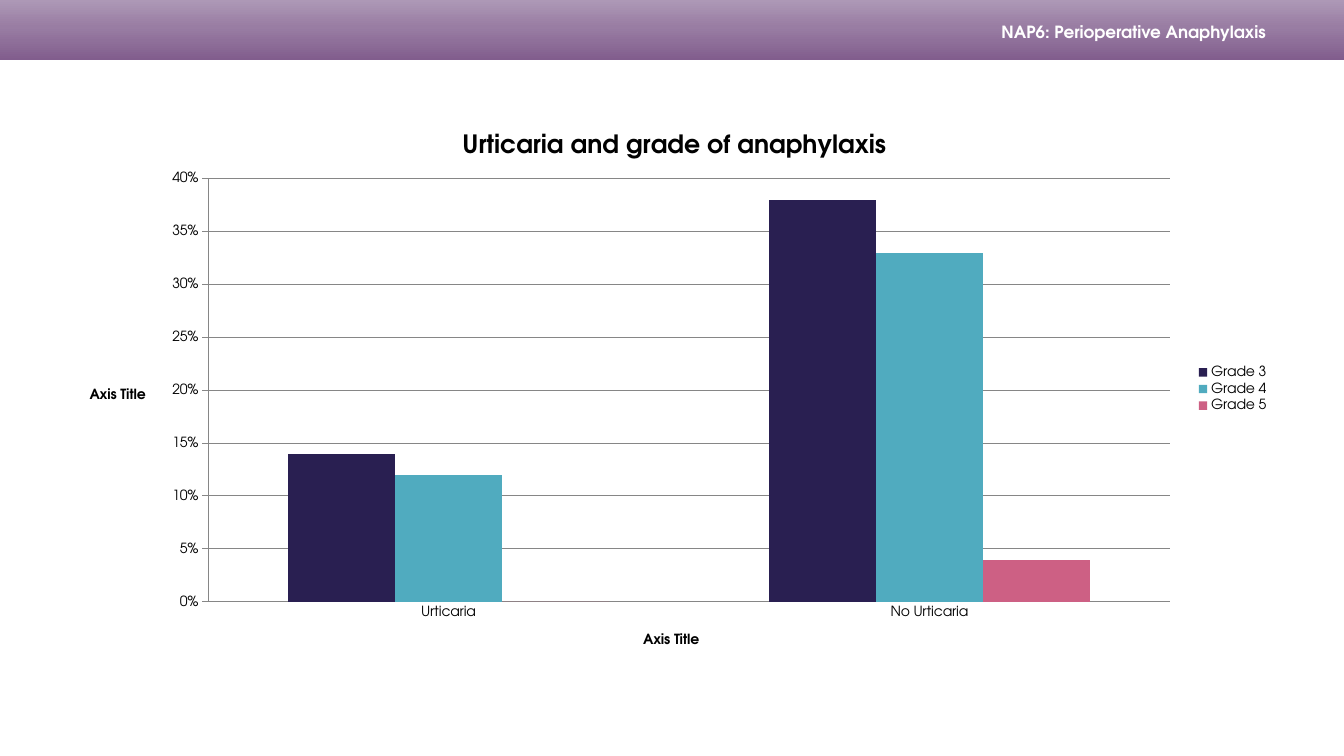
from copy import deepcopy

from lxml import etree
from pptx import Presentation
from pptx.chart.data import CategoryChartData
from pptx.dml.color import RGBColor
from pptx.enum.chart import XL_CHART_TYPE, XL_LEGEND_POSITION, XL_TICK_MARK
from pptx.enum.shapes import MSO_SHAPE
from pptx.enum.text import MSO_ANCHOR, PP_ALIGN
from pptx.oxml.ns import qn
from pptx.util import Pt

SLIDE_SIZE = (960, 540)
CHART_BOX = (49.7, 79.2, 864, 397.4)
PLOT_BOX = (148.6, 127.5, 687.1, 302.5)
COLORS = {
    "band_dark": "815D8D",
    "band_mid": "997DA3",
    "band_light": "AD98B6",
    "white": "FFFFFF",
    "black": "000000",
    "axis": "868686",
    "Grade 3": "291F51",
    "Grade 4": "50ABBF",
    "Grade 5": "CD6084",
}
GRADES = {
    "Grade 3": (0.14, 0.38),
    "Grade 4": (0.12, 0.33),
    "Grade 5": (0, 0.04),
}


def color(name):
    return RGBColor.from_string(COLORS[name])


def lengths(box):
    return [Pt(value) for value in box]


def write(frame, text, size=10, ink="black", bold=False, align=None,
          font="TeX Gyre Adventor"):
    paragraph = frame.paragraphs[0]
    paragraph.alignment = align
    run = paragraph.add_run()
    run.text = text
    run.font.name = font
    run.font.size = Pt(size)
    run.font.bold = bold
    run.font.color.rgb = color(ink)


class SlideBuilder:
    """Holds the style and the slide being filled."""

    def __init__(self, slide, font="TeX Gyre Adventor"):
        self.slide = slide
        self.font = font

    def gradient_band(self, box, stops):
        """Draw a rectangle whose colour stops run from bottom to top."""
        band = self.slide.shapes.add_shape(MSO_SHAPE.RECTANGLE, *lengths(box))
        band.shadow.inherit = False
        band.line.fill.background()
        band.fill.gradient()
        band.fill.gradient_angle = 90
        stop_list = next(band.element.iter(qn("a:gsLst")))
        stop_list.append(deepcopy(stop_list[0]))
        for stop, (position, name) in zip(band.fill.gradient_stops, stops):
            stop.position = position
            stop.color.rgb = color(name)

    def label(self, box, text, right_inset=0, **text_format):
        frame = self.slide.shapes.add_textbox(*lengths(box)).text_frame
        frame.word_wrap = True
        frame.vertical_anchor = MSO_ANCHOR.MIDDLE
        frame.margin_left = frame.margin_top = frame.margin_bottom = 0
        frame.margin_right = Pt(right_inset)
        write(frame, text, font=self.font, **text_format)

    def column_chart(self, box, plot_box, title, categories, series):
        chart_data = CategoryChartData(number_format="0%")
        chart_data.categories = categories
        for name, values in series.items():
            chart_data.add_series(name, values)
        chart = self.slide.shapes.add_chart(
            XL_CHART_TYPE.COLUMN_CLUSTERED, *lengths(box), chart_data).chart
        chart.font.name = self.font
        chart.font.size = Pt(10)
        chart.font.color.rgb = color("black")
        chart.has_title = True
        write(chart.chart_title.text_frame, title, size=18, bold=True,
              font=self.font)
        chart.has_legend = True
        chart.legend.position = XL_LEGEND_POSITION.RIGHT
        chart.legend.include_in_layout = False

        plot = chart.plots[0]
        plot.gap_width = 150
        plot.overlap = 0
        plot.vary_by_categories = False
        for column in plot.series:
            column.format.fill.solid()
            column.format.fill.fore_color.rgb = color(column.name)
            column.invert_if_negative = False

        self.style_axis(chart.category_axis, XL_TICK_MARK.NONE, "General")
        values_axis = chart.value_axis
        self.style_axis(values_axis, XL_TICK_MARK.OUTSIDE, "0%")
        values_axis.minimum_scale = 0
        values_axis.maximum_scale = 0.4
        values_axis.major_unit = 0.05
        values_axis.has_major_gridlines = True
        values_axis.major_gridlines.format.line.color.rgb = color("axis")
        values_axis.major_gridlines.format.line.width = Pt(0.75)
        self.place_plot(chart, box, plot_box)

    def style_axis(self, axis, tick, number_format):
        axis.major_tick_mark = tick
        axis.minor_tick_mark = XL_TICK_MARK.NONE
        axis.tick_labels.number_format = number_format
        axis.tick_labels.number_format_is_linked = False
        axis.format.line.color.rgb = color("axis")
        axis.format.line.width = Pt(0.75)
        axis.has_title = True
        frame = axis.axis_title.text_frame
        write(frame, "Axis Title", bold=True, font=self.font)
        body = next(axis.axis_title.element.iter(qn("a:bodyPr"))) \
            if hasattr(axis.axis_title, "element") \
            else next(axis.axis_title.format.line and
                      axis.axis_title._element.iter(qn("a:bodyPr")))
        body.set("rot", "0")
        body.set("vert", "horz")

    @staticmethod
    def place_plot(chart, box, plot_box):
        """Fix the inner plot area, as fractions of the chart's box."""
        area = next(chart.element.iter(qn("c:plotArea"))) \
            if hasattr(chart, "element") \
            else next(chart._chartSpace.iter(qn("c:plotArea")))
        for old_layout in area.findall(qn("c:layout")):
            area.remove(old_layout)
        layout = etree.Element(qn("c:layout"))
        area.insert(0, layout)
        manual = etree.SubElement(layout, qn("c:manualLayout"))
        left, top, width, height = box
        settings = {
            "layoutTarget": "inner",
            "xMode": "edge",
            "yMode": "edge",
            "x": (plot_box[0] - left) / width,
            "y": (plot_box[1] - top) / height,
            "w": plot_box[2] / width,
            "h": plot_box[3] / height,
        }
        for tag, value in settings.items():
            etree.SubElement(manual, qn(f"c:{tag}")).set("val", str(value))


def main():
    presentation = Presentation()
    presentation.slide_width, presentation.slide_height = lengths(SLIDE_SIZE)
    builder = SlideBuilder(
        presentation.slides.add_slide(presentation.slide_layouts[6]))
    builder.gradient_band(
        (0, 0, SLIDE_SIZE[0], 43),
        [(0, "band_dark"), (0.55, "band_mid"), (1, "band_light")])
    builder.label((601.2, 13, 320.4, 20), "NAP6: Perioperative Anaphylaxis",
                  right_inset=17.3, size=12, ink="white", bold=True,
                  align=PP_ALIGN.RIGHT)
    builder.column_chart(CHART_BOX, PLOT_BOX,
                         "Urticaria and grade of anaphylaxis",
                         ("Urticaria", "No Urticaria"), GRADES)
    presentation.save("out.pptx")


if __name__ == "__main__":
    main()
